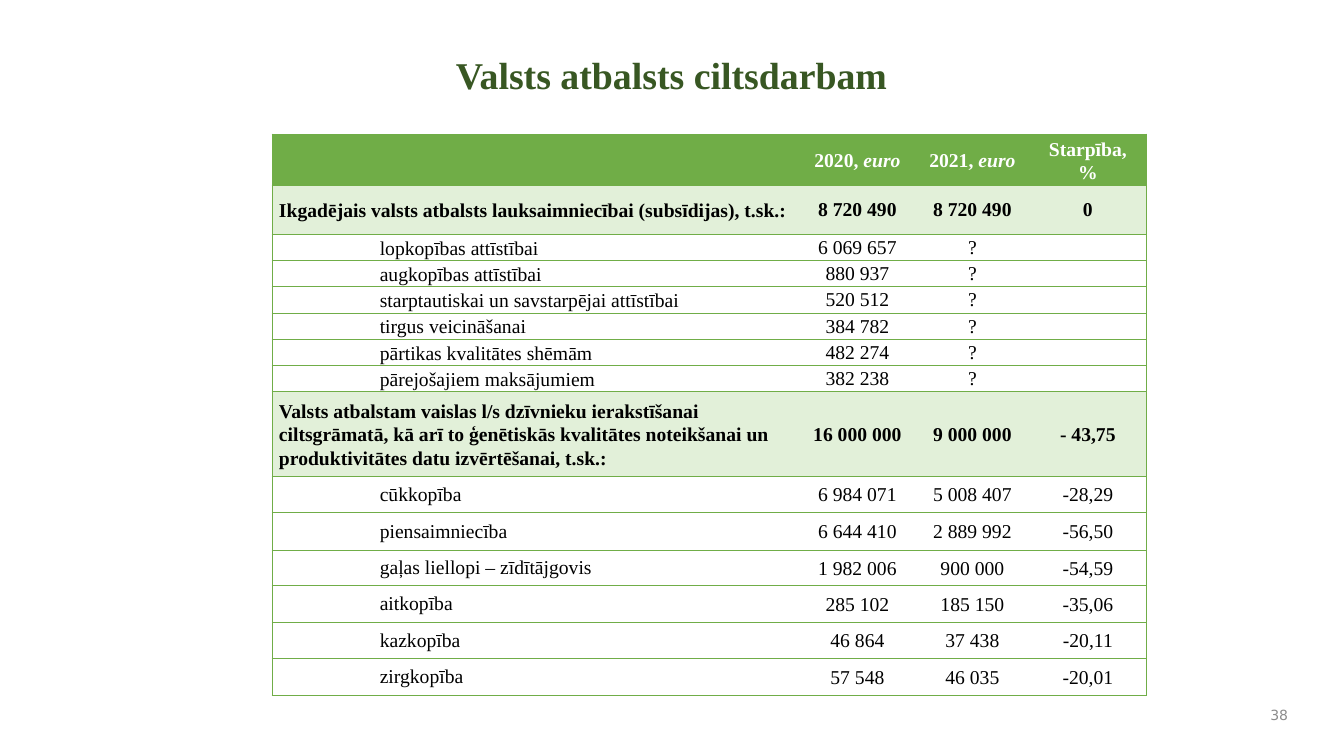
from lxml.etree import SubElement
from pptx import Presentation
from pptx.dml.color import RGBColor
from pptx.enum.text import MSO_ANCHOR, PP_ALIGN
from pptx.oxml.ns import qn
from pptx.util import Pt

SERIF = "Times New Roman"
GREEN, PALE, WHITE, BLACK = "70AD47", "E2F0D9", "FFFFFF", "000000"
PLAIN = "{2D5ABB26-0587-4C30-8999-92F81FD0307C}"
WIDTHS = [528, 115, 115, 116]
HEAD = [[], ["2020, ", "euro"], ["2021, ", "euro"], ["Starpība, %"]]
ROWS = [
    (49, "total", "Ikgadējais valsts atbalsts lauksaimniecībai (subsīdijas), t.sk.:",
     "8 720 490", "8 720 490", "0"),
    (24, "aid", "lopkopības attīstībai", "6 069 657", "?", ""),
    (25, "aid", "augkopības attīstībai", "880 937", "?", ""),
    (24, "aid", "starptautiskai un savstarpējai attīstībai", "520 512", "?", ""),
    (24, "aid", "tirgus veicināšanai", "384 782", "?", ""),
    (24, "aid", "pārtikas kvalitātes shēmām", "482 274", "?", ""),
    (25, "aid", "pārejošajiem maksājumiem", "382 238", "?", ""),
    (85, "total", "Valsts atbalstam vaislas l/s dzīvnieku ierakstīšanai ciltsgrāmatā, "
     "kā arī to ģenētiskās kvalitātes noteikšanai un produktivitātes datu "
     "izvērtēšanai, t.sk.:", "16 000 000", "9 000 000", "- 43,75"),
    (36, "herd", "cūkkopība", "6 984 071", "5 008 407", "-28,29"),
    (38, "herd", "piensaimniecība", "6 644 410", "2 889 992", "-56,50"),
    (35, "herd", "gaļas liellopi – zīdītājgovis", "1 982 006", "900 000", "-54,59"),
    (37, "herd", "aitkopība", "285 102", "185 150", "-35,06"),
    (36, "herd", "kazkopība", "46 864", "37 438", "-20,11"),
    (37, "herd", "zirgkopība", "57 548", "46 035", "-20,01"),
]


def px(n):
    return round(n * 914400 / 100.8)


def rgb(code):
    return RGBColor.from_string(code)


def add_run(para, text, size, color, face=SERIF, bold=False, italic=False):
    run = para.add_run()
    run.text = text
    font = run.font
    font.size, font.name = Pt(size), face
    font.bold, font.italic = bold, italic
    font.color.rgb = rgb(color)


def add_label(slide, box, text, size, color, align, face=SERIF, bold=False,
              anchor=MSO_ANCHOR.TOP, space=1.0):
    frame = slide.shapes.add_textbox(*map(px, box)).text_frame
    frame.word_wrap = True
    frame.vertical_anchor = anchor
    para = frame.paragraphs[0]
    para.alignment, para.line_spacing = align, space
    add_run(para, text, size, color, face, bold)


def add_edges(cell, sides):
    props = cell._tc.get_or_add_tcPr()
    for side in sides:
        line = SubElement(props, qn("a:ln" + side), w=str(Pt(0.5)))
        fill = SubElement(line, qn("a:solidFill"))
        SubElement(fill, qn("a:srgbClr"), val=GREEN)


def set_cell(cell, kind, col, parts):
    add_edges(cell, ("L" if col == 0 else "") + ("R" if col == 3 else "") + "TB")
    shade = {"head": GREEN, "total": PALE}.get(kind)
    if shade:
        cell.fill.solid()
        cell.fill.fore_color.rgb = rgb(shade)
    else:
        cell.fill.background()
    cell.vertical_anchor = MSO_ANCHOR.MIDDLE
    wide = col == 0 or (kind == "head" and col > 1)
    cell.margin_left = cell.margin_right = px(7 if wide else 1)
    cell.margin_top = px(0 if kind == "herd" and col == 0 else 1)
    cell.margin_bottom = 0
    para = cell.text_frame.paragraphs[0]
    para.alignment = PP_ALIGN.CENTER if col else PP_ALIGN.LEFT
    if kind == "head" or (col == 0 and kind != "herd"):
        para.line_spacing, para.space_after = 1.07, Pt(8)
    if col == 0 and kind in ("aid", "herd"):
        para.level = 2
        props = para._p.get_or_add_pPr()
        props.set("marL", "914400")
        props.set("indent", "0")
    for part in parts:
        add_run(para, part, 14, WHITE if kind == "head" else BLACK,
                bold=kind in ("head", "total"), italic=part == "euro")
    if not parts:
        SubElement(para._p, qn("a:endParaRPr"), sz="1400")


def add_grid(slide):
    rows = [(47, "head", HEAD)]
    rows += [(high, kind, [[text] if text else [] for text in texts])
             for high, kind, *texts in ROWS]
    size = sum(WIDTHS), sum(row[0] for row in rows)
    frame = slide.shapes.add_table(len(rows), len(WIDTHS), *map(px, (272, 134, *size)))
    table = frame.table
    table.first_row = table.horz_banding = False
    table._tbl.tblPr.find(qn("a:tableStyleId")).text = PLAIN
    for col, wide in zip(table.columns, WIDTHS):
        col.width = px(wide)
    for r, (high, kind, cells) in enumerate(rows):
        table.rows[r].height = px(high)
        for c, parts in enumerate(cells):
            set_cell(table.cell(r, c), kind, c, parts)


def main():
    deck = Presentation()
    deck.slide_width, deck.slide_height = px(1344), px(756)
    slide = deck.slides.add_slide(deck.slide_layouts[6])
    add_label(slide, (1254, 698, 44, 33), "38", 10, "8C8C8C", PP_ALIGN.RIGHT,
              face="DejaVu Sans", anchor=MSO_ANCHOR.MIDDLE)
    add_label(slide, (250, 52, 843, 54), "Valsts atbalsts ciltsdarbam", 27, "385723",
              PP_ALIGN.CENTER, bold=True, space=0.9)
    add_grid(slide)
    deck.save("out.pptx")


if __name__ == "__main__":
    main()
